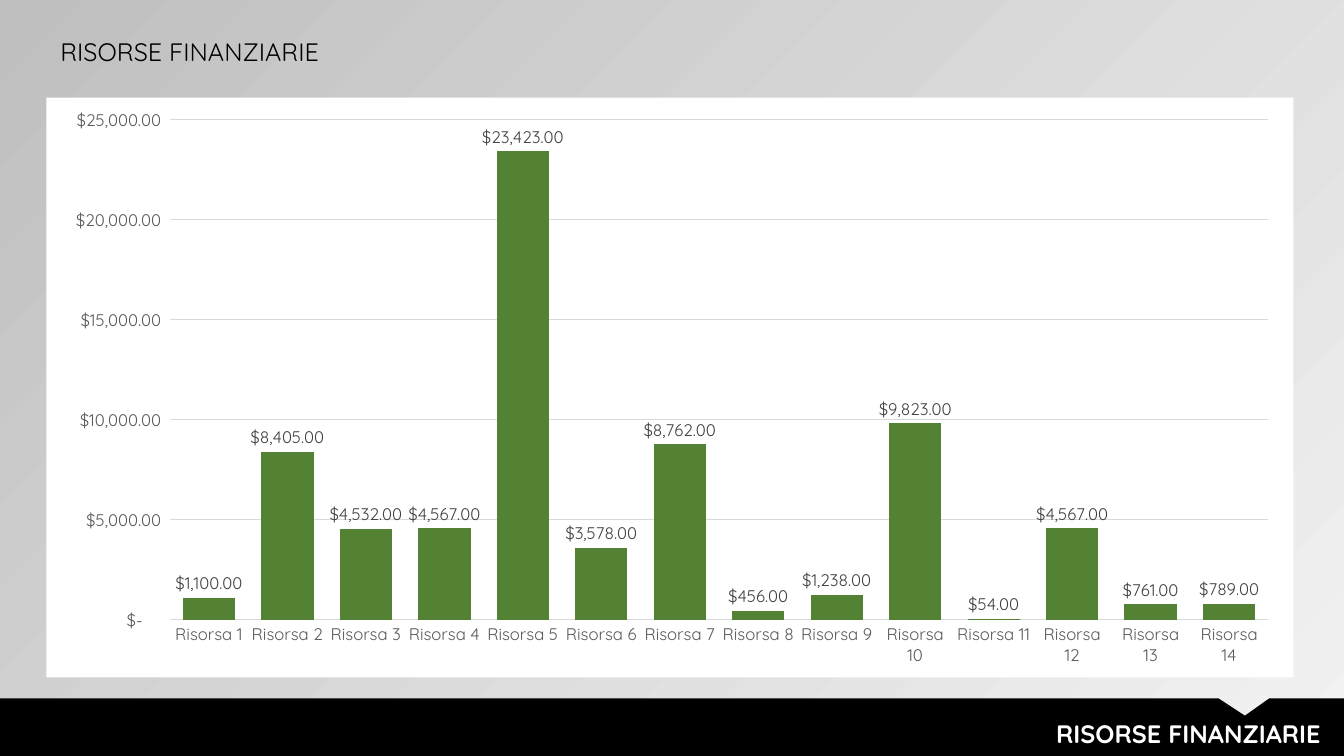
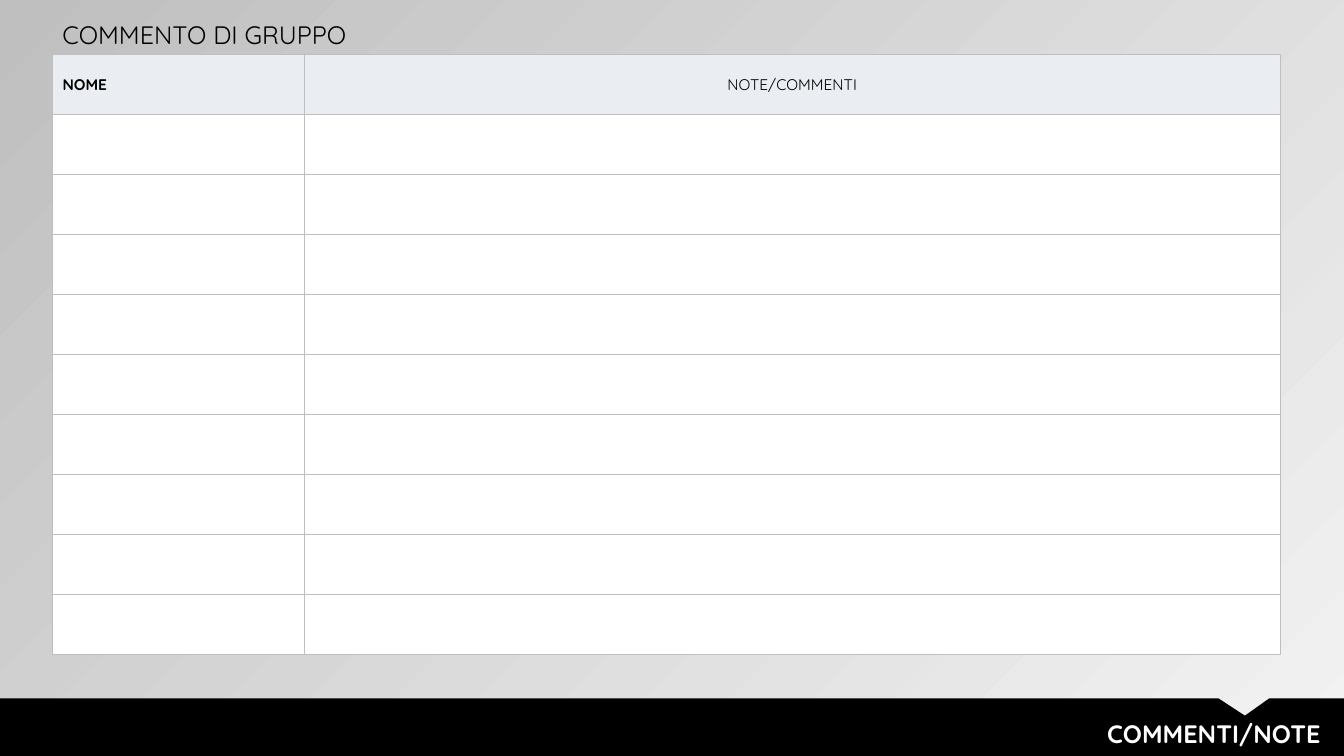
import dataclasses

import lxml.etree
import pptx
import pptx.chart.data
import pptx.dml.color
import pptx.enum.chart
import pptx.enum.dml
import pptx.enum.text
import pptx.oxml.ns
import pptx.util


@dataclasses.dataclass(frozen=True)
class Theme:
    font: str = "Quicksand"
    black: str = "000000"
    white: str = "FFFFFF"
    light: str = "F2F2F2"
    grey: str = "BFBFBF"
    header: str = "EAEEF3"
    grid: str = "D9D9D9"
    axis_text: str = "595959"
    label_text: str = "404040"
    bar: str = "548235"
    title_size: int = 18
    chart_size: int = 12
    table_size: int = 11
    gradient_angle: int = 135


THEME = Theme()
WIDTH = pptx.util.Inches(13.333)
HEIGHT = pptx.util.Inches(7.5)
BAND_TOP = 92.4
CURRENCY = '_("$"* #,##0.00_);_("$"* \\(#,##0.00\\);_("$"* "-"??_);_(@_)'
RESOURCES = [1100, 8405, 4532, 4567, 23423, 3578, 8762, 456, 1238, 9823, 54, 4567, 761, 789]


def across(percent):
    return round(WIDTH * percent / 100)


def down(percent):
    return round(HEIGHT * percent / 100)


def box(left, top, width, height):
    return across(left), down(top), across(width), down(height)


def rgb(color):
    return pptx.dml.color.RGBColor.from_string(color)


def paint(fill, color):
    fill.solid()
    fill.fore_color.rgb = rgb(color)


def style_font(font, size, color, bold=False):
    font.name = THEME.font
    font.size = pptx.util.Pt(size)
    font.bold = bold
    font.color.rgb = rgb(color)


def add_element(parent, tag, **attributes):
    return lxml.etree.SubElement(parent, pptx.oxml.ns.qn(tag), **attributes)


def add_solid_fill(parent, color):
    add_element(add_element(parent, "a:solidFill"), "a:srgbClr", val=color)


def add_text(slide, text, bounds, color, bold=False, align=pptx.enum.text.PP_ALIGN.LEFT):
    frame = slide.shapes.add_textbox(*bounds).text_frame
    frame.word_wrap = True
    frame.auto_size = pptx.enum.text.MSO_AUTO_SIZE.SHAPE_TO_FIT_TEXT
    frame.text = text
    paragraph = frame.paragraphs[0]
    paragraph.alignment = align
    style_font(paragraph.runs[0].font, THEME.title_size, color, bold)


def add_title(slide, text, left, top):
    add_text(slide, text, box(left, top, 33.3, 5.33), THEME.black)


def add_footer(slide, caption):
    outline = [(0, BAND_TOP), (90.68, BAND_TOP), (92.63, 94.67), (94.43, BAND_TOP),
               (100, BAND_TOP), (100, 100), (0, 100)]
    points = [(across(x), down(y)) for x, y in outline]
    builder = slide.shapes.build_freeform(*points[0])
    builder.add_line_segments(points[1:], close=True)
    band = builder.convert_to_shape()
    band.shadow.inherit = False
    paint(band.fill, THEME.black)
    band.line.fill.background()
    add_text(slide, caption, box(31.05, 94.4, 67.95, 5.33), THEME.white, True,
             pptx.enum.text.PP_ALIGN.RIGHT)


def add_slide(presentation):
    slide = presentation.slides.add_slide(presentation.slide_layouts[6])
    fill = slide.background.fill
    fill.gradient()
    fill.gradient_angle = THEME.gradient_angle
    for stop, color in zip(fill.gradient_stops, (THEME.light, THEME.grey)):
        stop.color.rgb = rgb(color)
    return slide


def fill_chart_area(chart):
    properties = lxml.etree.Element(pptx.oxml.ns.qn("c:spPr"))
    add_solid_fill(properties, THEME.white)
    add_element(add_element(properties, "a:ln"), "a:noFill")
    chart.element.find(pptx.oxml.ns.qn("c:chart")).addnext(properties)


def style_line(line):
    line.color.rgb = rgb(THEME.grid)
    line.width = pptx.util.Pt(0.75)


def style_axis(axis):
    axis.major_tick_mark = pptx.enum.chart.XL_TICK_MARK.NONE
    axis.minor_tick_mark = pptx.enum.chart.XL_TICK_MARK.NONE
    style_font(axis.tick_labels.font, THEME.chart_size, THEME.axis_text)


def add_column_chart(slide, values, bounds):
    data = pptx.chart.data.CategoryChartData()
    data.categories = [f"Risorsa {number}" for number in range(1, len(values) + 1)]
    data.add_series("Series 1", values)
    chart = slide.shapes.add_chart(
        pptx.enum.chart.XL_CHART_TYPE.COLUMN_CLUSTERED, *bounds, data).chart
    chart.has_title = False
    chart.has_legend = False
    style_font(chart.font, THEME.chart_size, THEME.black)
    fill_chart_area(chart)

    style_axis(chart.category_axis)
    style_line(chart.category_axis.format.line)
    value_axis = chart.value_axis
    style_axis(value_axis)
    value_axis.minimum_scale = 0
    value_axis.maximum_scale = 25000
    value_axis.major_unit = 5000
    value_axis.format.line.fill.background()
    style_line(value_axis.major_gridlines.format.line)

    plot = chart.plots[0]
    plot.gap_width = 50
    plot.vary_by_categories = False
    paint(plot.series[0].format.fill, THEME.bar)
    plot.has_data_labels = True
    labels = plot.data_labels
    labels.show_value = True
    labels.position = pptx.enum.chart.XL_LABEL_POSITION.OUTSIDE_END
    style_font(labels.font, THEME.chart_size, THEME.label_text)
    for numbered in (value_axis.tick_labels, labels):
        numbered.number_format = CURRENCY
        numbered.number_format_is_linked = False


def style_cell(cell, color):
    properties = cell._tc.get_or_add_tcPr()
    for side in ("a:lnL", "a:lnR", "a:lnT", "a:lnB"):
        border = add_element(properties, side, w=str(pptx.util.Pt(1)))
        add_solid_fill(border, THEME.grey)
    paint(cell.fill, color)


def add_header(cell, text, bold, align):
    cell.vertical_anchor = pptx.enum.text.MSO_ANCHOR.MIDDLE
    cell.margin_top = cell.margin_bottom = 0
    cell.text = text
    paragraph = cell.text_frame.paragraphs[0]
    paragraph.alignment = align
    style_font(paragraph.runs[0].font, THEME.table_size, THEME.black, bold)


def add_comment_table(slide, left, top, column_widths, height, row_count):
    bounds = box(left, top, sum(column_widths), height)
    table = slide.shapes.add_table(row_count, len(column_widths), *bounds).table
    table.first_row = False
    table.horz_banding = False
    for column, width in zip(table.columns, column_widths):
        column.width = across(width)
    for index, row in enumerate(table.rows):
        row.height = down(height / row_count)
        for cell in row.cells:
            style_cell(cell, THEME.white if index else THEME.header)
    add_header(table.cell(0, 0), "NOME", True, pptx.enum.text.PP_ALIGN.LEFT)
    add_header(table.cell(0, 1), "NOTE/COMMENTI", False, pptx.enum.text.PP_ALIGN.CENTER)


def add_resources_slide(presentation):
    slide = add_slide(presentation)
    add_footer(slide, "RISORSE FINANZIARIE")
    add_column_chart(slide, RESOURCES, box(3.45, 12.93, 92.78, 76.67))
    add_title(slide, "RISORSE FINANZIARIE", 3.75, 4.13)


def add_comments_slide(presentation):
    slide = add_slide(presentation)
    add_comment_table(slide, 3.9, 7.2, (18.75, 72.6), 79.4, 10)
    add_footer(slide, "COMMENTI/NOTE")
    add_title(slide, "COMMENTO DI GRUPPO", 3.9, 1.87)


def main():
    presentation = pptx.Presentation()
    presentation.slide_width = WIDTH
    presentation.slide_height = HEIGHT
    add_resources_slide(presentation)
    add_comments_slide(presentation)
    presentation.save("out.pptx")


if __name__ == "__main__":
    main()
